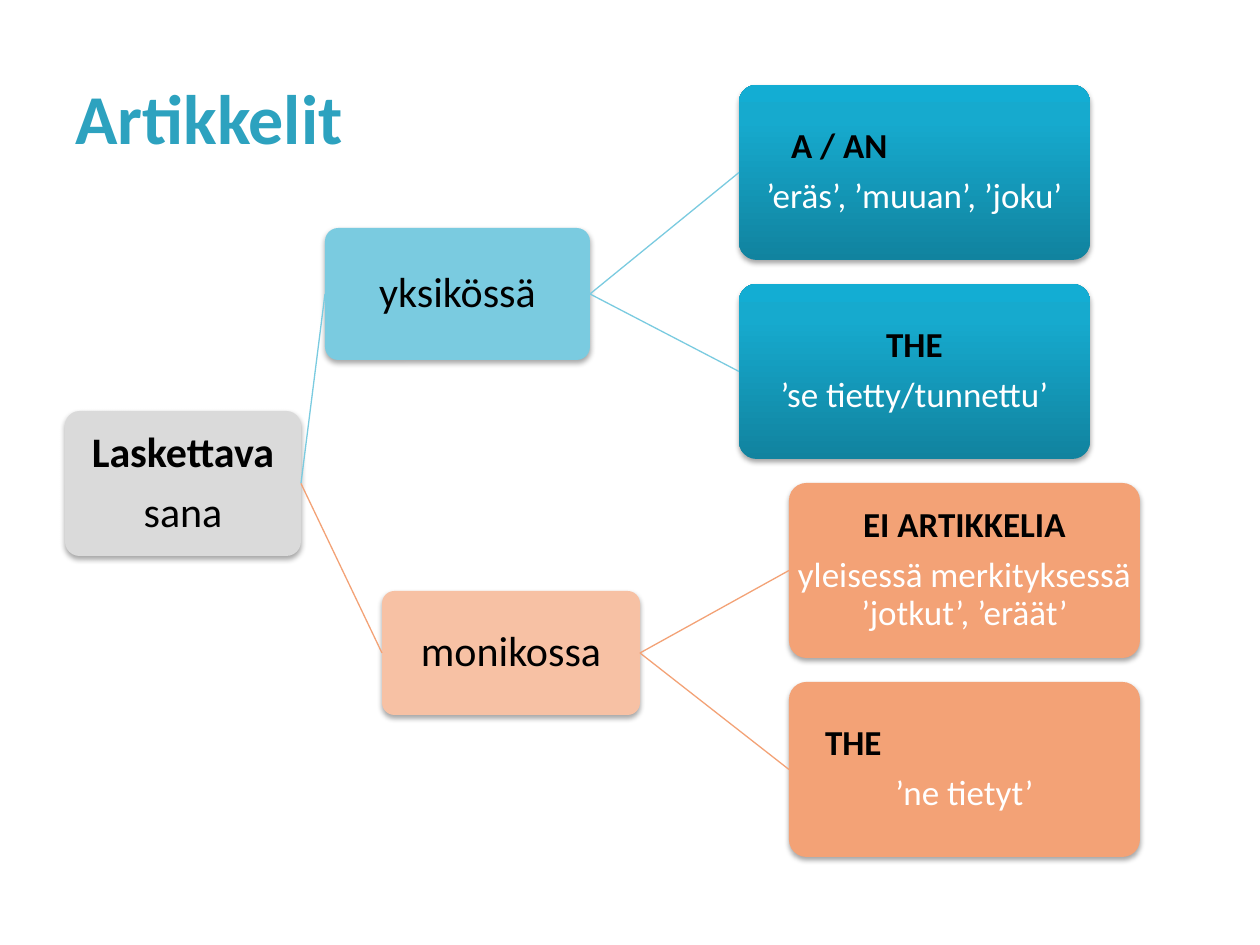
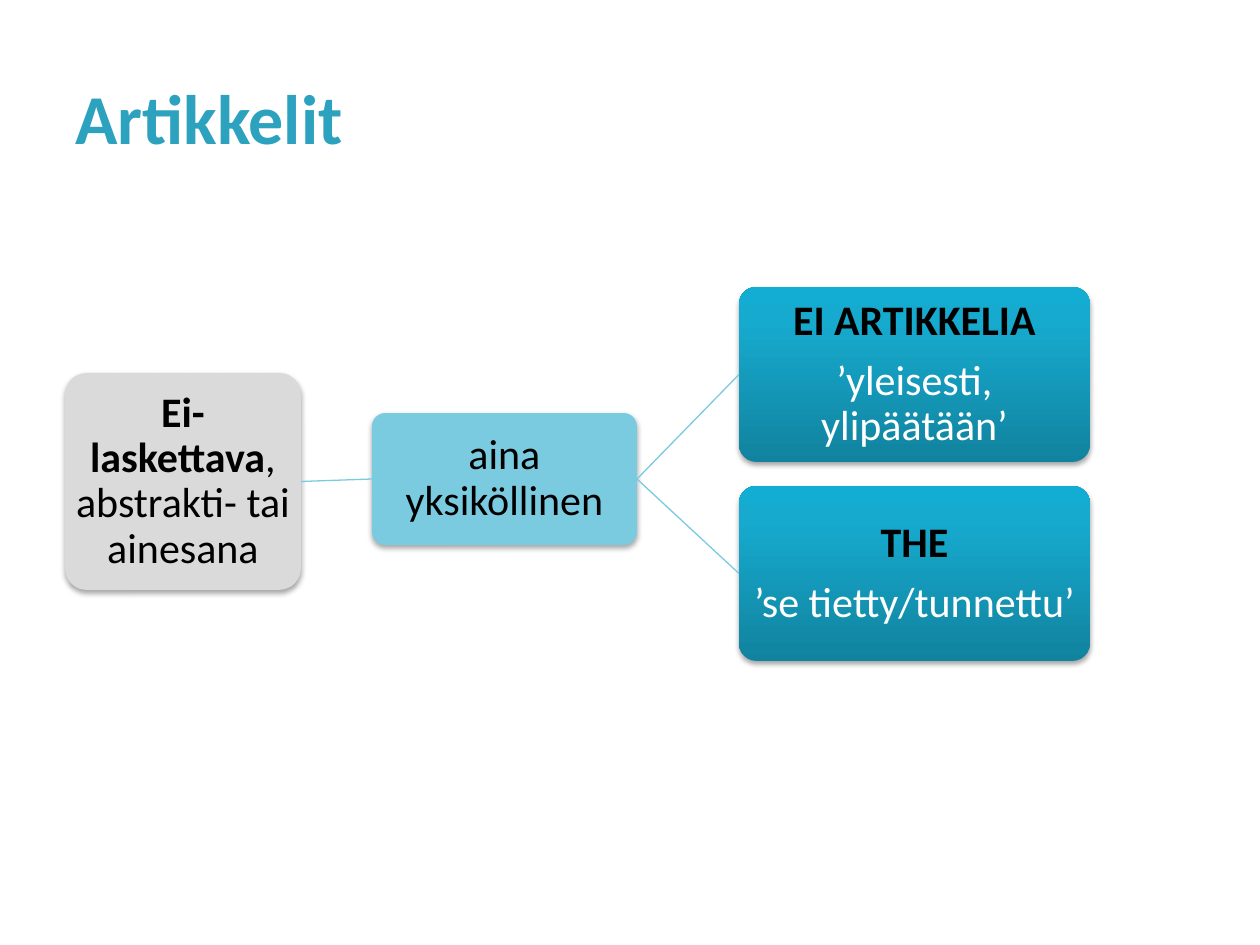
import copy
import pptx
import pptx.util
import pptx.dml.color
import pptx.enum.shapes
import pptx.enum.text
import pptx.oxml
import pptx.oxml.ns

PX = 914400 / 126
FONT = "Calibri"
HUES = {
    "title": "2DA2BF", "black": "000000", "white": "FFFFFF",
    "grey": "DADADA", "sky": "7ACBE0", "peach": "F7C1A4", "orange": "F3A276",
    "deep": "11839F", "teal": "16AACE", "cyan": "13ADD3",
}
BLEND = [(0, "deep"), (0.8, "teal"), (1, "cyan")]
SHADE = (
    '<a:outerShdw xmlns:a="http://schemas.openxmlformats.org/drawingml/2006/main"'
    ' blurRad="40000" dist="23000" dir="5400000" rotWithShape="0">'
    '<a:srgbClr val="000000"><a:alpha val="35000"/></a:srgbClr></a:outerShdw>'
)
ROOT_X, LEAF_X = 65, 739
LEAF_W, LEAF_H, STEP = 351, 175, 199


def px(n):
    return pptx.util.Emu(round(n * PX))


def rgb(hue):
    return pptx.dml.color.RGBColor.from_string(HUES[hue])


def style(para, size, hue, bold):
    para.font.name = FONT
    para.font.size = pptx.util.Pt(size)
    para.font.color.rgb = rgb(hue)
    para.font.bold = bold


def title(slide, text):
    box = slide.shapes.add_textbox(px(63), px(38), px(1134), px(158))
    frame = box.text_frame
    frame.word_wrap = True
    frame.vertical_anchor = pptx.enum.text.MSO_ANCHOR.MIDDLE
    frame.text = text
    style(frame.paragraphs[0], 40, "title", True)


def blend(shape):
    shape.fill.gradient()
    shape.fill.gradient_angle = 90
    stops = shape._element.find(".//" + pptx.oxml.ns.qn("a:gsLst"))
    stops.append(copy.deepcopy(stops[0]))
    for stop, (place, hue) in zip(shape.fill.gradient_stops, BLEND):
        stop.position = place
        stop.color.rgb = rgb(hue)


def shade(shape):
    shape.shadow.inherit = False
    effects = shape._element.spPr.find(pptx.oxml.ns.qn("a:effectLst"))
    effects.append(pptx.oxml.parse_xml(SHADE))


def write(para, text, size, hue="black", bold=False, indent=0):
    para.alignment = pptx.enum.text.PP_ALIGN.CENTER
    if indent:
        para.alignment = pptx.enum.text.PP_ALIGN.LEFT
        para._p.get_or_add_pPr().set("marL", str(px(indent)))
    para.line_spacing = 0.9
    para.space_after = pptx.util.Pt(0.35 * size)
    style(para, size, hue, bold)
    para.add_run().text = text


def node(slide, fill, box, lines, size=24):
    kind = pptx.enum.shapes.MSO_SHAPE.ROUNDED_RECTANGLE
    shape = slide.shapes.add_shape(kind, *map(px, box))
    shape.adjustments[0] = 0.1
    if fill == "blend":
        blend(shape)
    else:
        shape.fill.solid()
        shape.fill.fore_color.rgb = rgb(fill)
    shape.line.fill.background()
    shade(shape)
    frame = shape.text_frame
    frame.word_wrap = True
    frame.vertical_anchor = pptx.enum.text.MSO_ANCHOR.MIDDLE
    inset = px(3 if size == 24 else 1)
    frame.margin_left = frame.margin_right = inset
    frame.margin_top = frame.margin_bottom = inset
    for i, line in enumerate(lines):
        para = frame.add_paragraph() if i else frame.paragraphs[0]
        write(para, size=size, **line)
    return shape


def leaf(slide, fill, x, y, head, body, size, indent=0):
    lines = [dict(text=head, bold=True, indent=indent), dict(text=body, hue="white")]
    return node(slide, fill, (x, y, LEAF_W, LEAF_H), lines, size)


def link(slide, start, end, hue):
    kind = pptx.enum.shapes.MSO_CONNECTOR.STRAIGHT
    line = slide.shapes.add_connector(kind, 0, 0, 0, 0)
    line.begin_connect(start, 3)
    line.end_connect(end, 1)
    line.line.color.rgb = rgb(hue)
    line.line.width = pptx.util.Pt(0.75)
    pptx.oxml.ns.qn("a:effectLst")
    spare = line._element.spPr
    spare.append(spare.makeelement(pptx.oxml.ns.qn("a:effectLst"), {}))


def branch(slide, root, stem, leaves, hue):
    link(slide, root, stem, hue)
    for item in leaves:
        link(slide, stem, item, hue)


def count(slide):
    title(slide, "Artikkelit")
    root = node(slide, "grey", (ROOT_X, 411, 236, 145),
                [dict(text="Laskettava", bold=True), dict(text="sana")])
    groups = [
        ("sky", "sky", "blend", (325, 228, 265, 132), "yksikössä", LEAF_X, [
            ("A / AN", "’eräs’, ’muuan’, ’joku’", 46),
            ("THE", "’se tietty/tunnettu’", 0)]),
        ("orange", "peach", "orange", (382, 591, 258, 124), "monikossa", 789, [
            ("EI ARTIKKELIA", "yleisessä merkityksessä ’jotkut’, ’eräät’", 0),
            ("THE", "’ne tietyt’", 30)]),
    ]
    y = 85
    for hue, tint, fill, box, name, x, texts in groups:
        stem = node(slide, tint, box, [dict(text=name)])
        leaves = []
        for head, body, indent in texts:
            leaves.append(leaf(slide, fill, x, y, head, body, 20, indent))
            y += STEP
        branch(slide, root, stem, leaves, hue)


def mass(slide):
    title(slide, "Artikkelit")
    root = node(slide, "grey", (ROOT_X, 373, 236, 217),
                [dict(text="Ei-laskettava", bold=None)])
    para = root.text_frame.paragraphs[0]
    para.runs[0].font.bold = True
    para.add_run().text = ", abstrakti- tai ainesana"
    stem = node(slide, "sky", (372, 413, 265, 132), [dict(text="aina yksiköllinen")])
    texts = [("EI ARTIKKELIA", "’yleisesti, ylipäätään’"),
             ("THE", "’se tietty/tunnettu’")]
    leaves = [leaf(slide, "blend", LEAF_X, 287 + STEP * i, head, body, 24)
              for i, (head, body) in enumerate(texts)]
    branch(slide, root, stem, leaves, "sky")


def main():
    deck = pptx.Presentation()
    deck.slide_width, deck.slide_height = px(1260), px(945)
    for build in (count, mass):
        build(deck.slides.add_slide(deck.slide_layouts[6]))
    deck.save("out.pptx")


if __name__ == "__main__":
    main()
